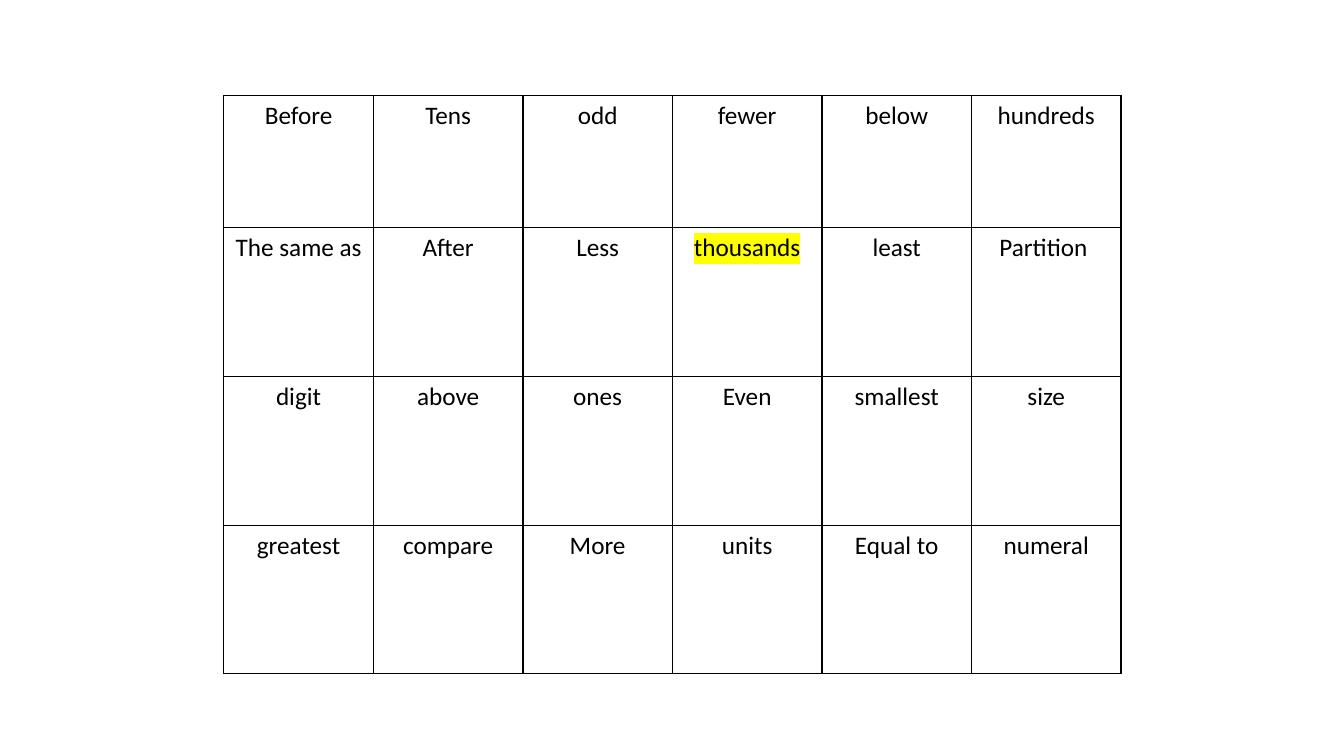
from dataclasses import dataclass

from lxml.etree import SubElement as Sub
from pptx import Presentation
from pptx.dml.color import RGBColor as RGB
from pptx.enum.text import PP_ALIGN as Align
from pptx.oxml.ns import qn
from pptx.util import Inches, Pt


@dataclass(frozen=True)
class Theme:
    font: str = "Calibri"
    size: int = 18
    ink: str = "000000"
    paper: str = "FFFFFF"
    mark: str = "FFFF00"
    rule: int = 1


THEME = Theme()

WORDS = [
    ["Before", "Tens", "odd", "fewer", "below", "hundreds"],
    ["The same as", "After", "Less", "thousands", "least", "Partition "],
    ["digit", "above", "ones", "Even", "smallest", "size"],
    ["greatest", "compare", "More", "units", "Equal to", "numeral"],
]
MARKED = {"thousands"}
LEFT, TOP, WIDTH = 2.22, 0.95, 8.9
FIRST, OTHER = 1.31, 1.475  # row heights


def add_fill(node, color):
    fill = Sub(node, qn("a:solidFill"))
    Sub(fill, qn("a:srgbClr"), val=color)


def add_rules(cell):
    """Draw the four borders of a cell, ahead of its fill."""
    props = cell._tc.get_or_add_tcPr()
    for side in ("lnL", "lnR", "lnT", "lnB"):
        line = Sub(props, qn(f"a:{side}"), w=str(Pt(THEME.rule)))
        add_fill(line, THEME.ink)


def add_word(cell, word):
    para = cell.text_frame.paragraphs[0]
    para.alignment = Align.CENTER
    run = para.add_run()
    run.text = word
    run.font.size = Pt(THEME.size)
    run.font.color.rgb = RGB.from_string(THEME.ink)
    if word in MARKED:
        mark = Sub(run._r.get_or_add_rPr(), qn("a:highlight"))
        Sub(mark, qn("a:srgbClr"), val=THEME.mark)
    run.font.name = THEME.font


def add_grid(slide, words):
    rows, cols = len(words), len(words[0])
    height = FIRST + OTHER * (rows - 1)
    frame = slide.shapes.add_table(
        rows, cols, Inches(LEFT), Inches(TOP), Inches(WIDTH), Inches(height))
    table = frame.table
    table.first_row = False
    table.horz_banding = False
    for col in table.columns:
        col.width = Inches(WIDTH / cols)
    for i, row in enumerate(table.rows):
        row.height = Inches(OTHER if i else FIRST)
        for cell, word in zip(row.cells, words[i]):
            add_rules(cell)
            cell.fill.solid()
            cell.fill.fore_color.rgb = RGB.from_string(THEME.paper)
            add_word(cell, word)


def main():
    deck = Presentation()
    deck.slide_width, deck.slide_height = Inches(13.33), Inches(7.5)
    slide = deck.slides.add_slide(deck.slide_layouts[6])
    # Word grid
    add_grid(slide, WORDS)
    deck.save("out.pptx")


if __name__ == "__main__":
    main()
